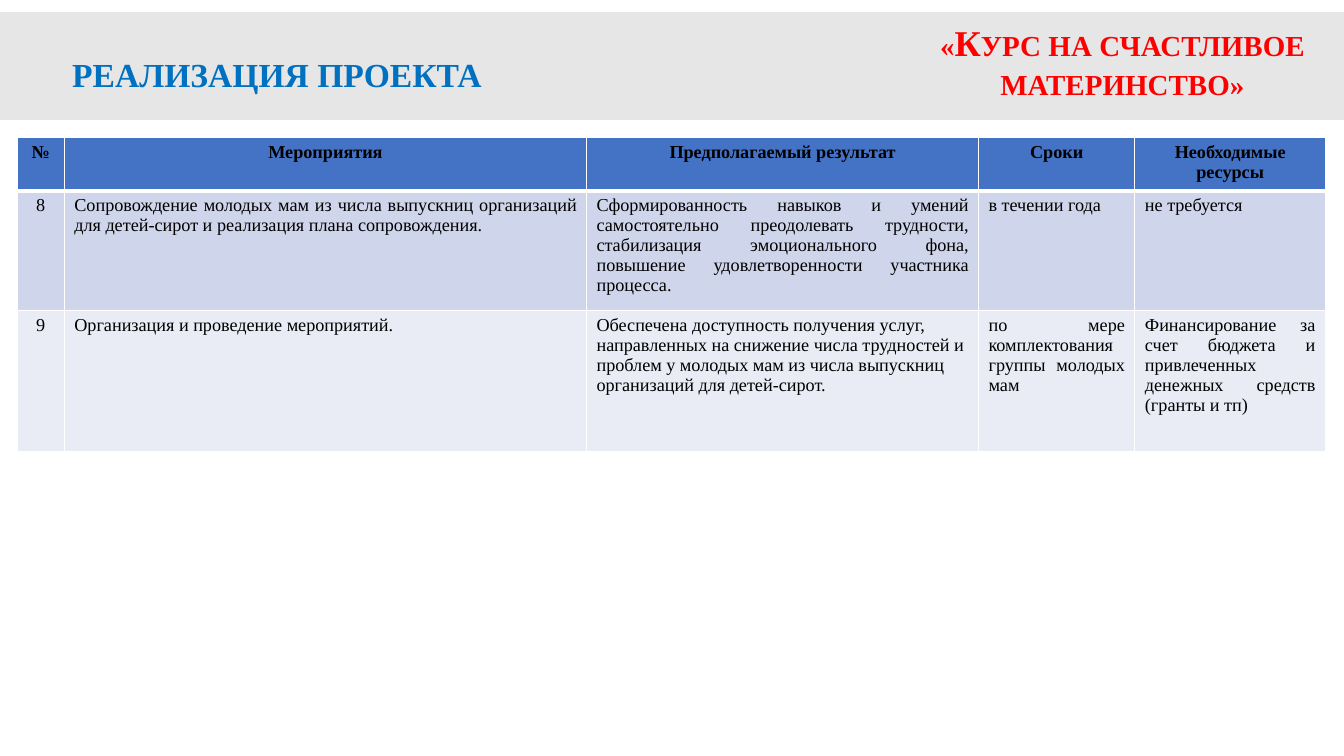
from lxml import etree
from pptx import Presentation
from pptx.dml.color import RGBColor
from pptx.enum.shapes import MSO_SHAPE
from pptx.enum.text import MSO_ANCHOR, MSO_AUTO_SIZE, PP_ALIGN
from pptx.oxml.ns import qn
from pptx.util import Cm, Pt

RECT = MSO_SHAPE.RECTANGLE
LEFT, MID, JUST = PP_ALIGN.LEFT, PP_ALIGN.CENTER, PP_ALIGN.JUSTIFY
FONT = "Times New Roman"
COLORS = {
    "band": "E7E6E6", "title": "0070C0", "course": "FF0000", "text": "000000",
    "head": "4472C4", "odd": "CFD5EA", "even": "E9EBF5", "rule": "FFFFFF",
}

TITLE = "РЕАЛИЗАЦИЯ ПРОЕКТА"
COURSE = "«Курс на счастливое материнство»"
ROWS = [
    ("№", "Мероприятия", "Предполагаемый результат", "Сроки", "Необходимые ресурсы"),
    ("8",
     "Сопровождение молодых мам из числа выпускниц организаций для детей-сирот "
     "и реализация плана сопровождения.",
     "Сформированность навыков и умений самостоятельно преодолевать трудности, "
     "стабилизация эмоционального фона, повышение удовлетворенности участника процесса.",
     "в течении года",
     "не требуется"),
    ("9",
     "Организация и проведение мероприятий.",
     "Обеспечена доступность получения услуг, направленных на снижение числа трудностей "
     "и проблем у молодых мам из числа выпускниц организаций для детей-сирот.",
     "по мере комплектования группы молодых мам",
     "Финансирование за счет бюджета и привлеченных денежных средств (гранты и тп)"),
]
ALIGNS = [
    [MID] * 5,
    [MID, JUST, JUST, JUST, JUST],
    [MID, JUST, LEFT, JUST, JUST],
]
FILLS = ["head", "odd", "even"]
WIDTHS = [1.19, 13.16, 9.88, 3.94, 4.8]
HEIGHTS = [1.35, 3.02, 3.56]


def color(name):
    return RGBColor.from_string(COLORS[name])


def style(para, size, name, bold, align):
    para.alignment = align
    for run in para.runs:
        font = run.font
        font.name, font.size, font.bold = FONT, Pt(size), bold
        font.color.rgb = color(name)


def add_text(slide, text, box, size, name, align, wrap):
    shape = slide.shapes.add_textbox(*map(Cm, box))
    frame = shape.text_frame
    frame.text = text
    frame.word_wrap = wrap
    frame.vertical_anchor = MSO_ANCHOR.TOP
    para = frame.paragraphs[0]
    style(para, size, name, True, align)
    return frame


def add_rules(cell, row):
    """Draw the cell borders, thick between the header and the body."""
    props = cell._tc.get_or_add_tcPr()
    top, bottom = (3 if row == 1 else 1), (3 if row == 0 else 1)
    for side, width in zip("LRTB", (1, 1, top, bottom)):
        line = etree.SubElement(props, qn(f"a:ln{side}"), w=str(Pt(width)))
        fill = etree.SubElement(line, qn("a:solidFill"))
        etree.SubElement(fill, qn("a:srgbClr"), val=COLORS["rule"])


def add_plan(slide):
    frame = slide.shapes.add_table(
        len(ROWS), len(WIDTHS), Cm(0.43), Cm(3.45), Cm(sum(WIDTHS)), Cm(sum(HEIGHTS)))
    table = frame.table
    for col, width in zip(table.columns, WIDTHS):
        col.width = Cm(width)
    for r, texts in enumerate(ROWS):
        table.rows[r].height = Cm(HEIGHTS[r])
        for c, text in enumerate(texts):
            cell = table.cell(r, c)
            cell.text_frame.text = text
            style(cell.text_frame.paragraphs[0], 13, "text", r == 0, ALIGNS[r][c])
            add_rules(cell, r)
            cell.fill.solid()
            cell.fill.fore_color.rgb = color(FILLS[r])


def main():
    deck = Presentation()
    deck.slide_width, deck.slide_height = Cm(33.87), Cm(19.05)
    slide = deck.slides.add_slide(deck.slide_layouts[6])

    band = slide.shapes.add_shape(RECT, Cm(0), Cm(0.33), deck.slide_width, Cm(2.67))
    band.shadow.inherit = False
    band.fill.solid()
    band.fill.fore_color.rgb = color("band")
    band.line.color.rgb = color("band")
    band.line.width = Pt(1)

    title = add_text(slide, TITLE, (1.57, 1.24, 10.92, 1.27), 24, "title", LEFT, False)
    title.auto_size = MSO_AUTO_SIZE.SHAPE_TO_FIT_TEXT
    add_plan(slide)

    course = add_text(slide, COURSE, (23.16, 0.51, 10.26, 2.74), 25.9, "course", MID, True)
    para = course.paragraphs[0]
    para.line_spacing, para.space_before = 0.9, Pt(10)
    para.runs[0].font._element.set("cap", "small")

    deck.save("out.pptx")


if __name__ == "__main__":
    main()
